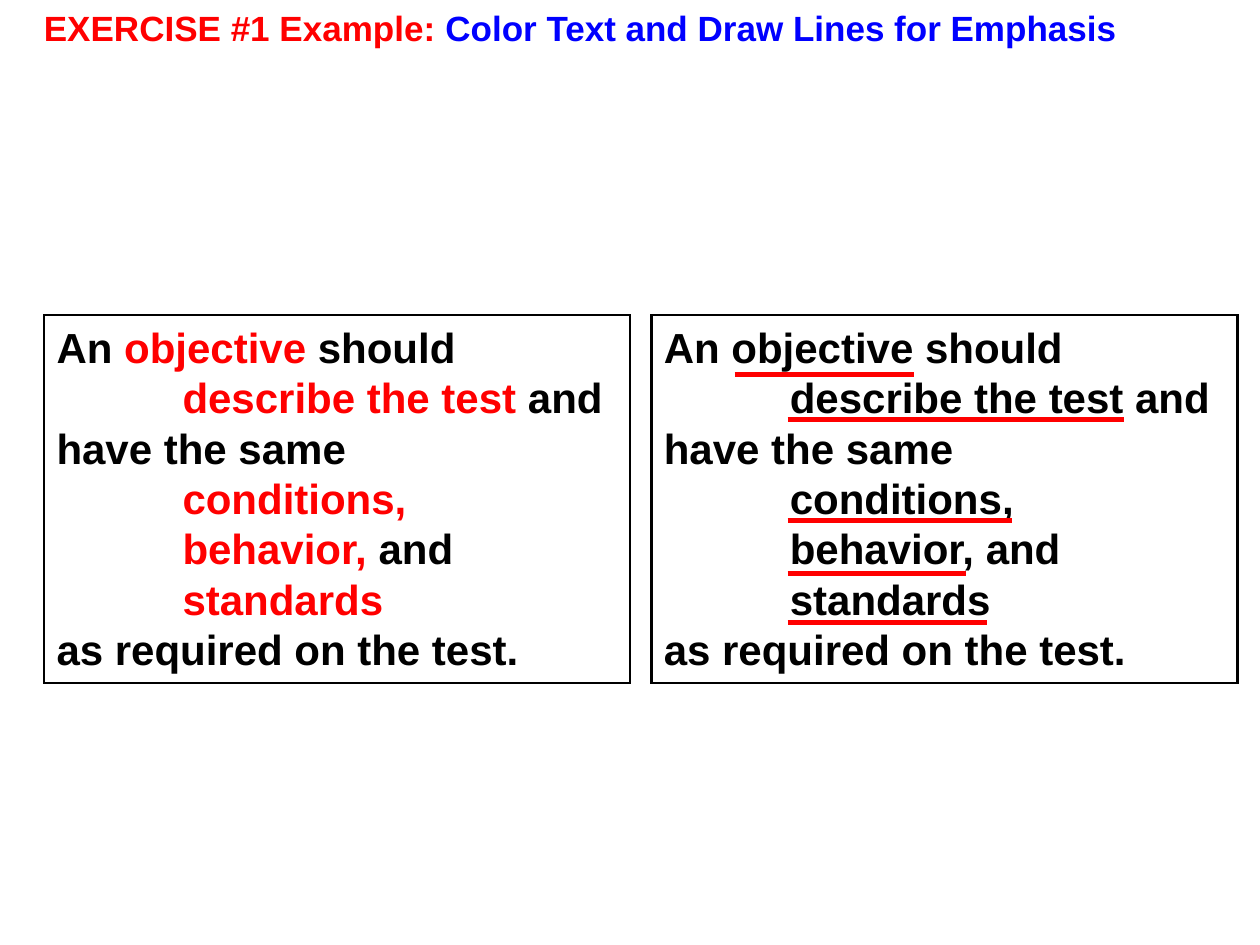
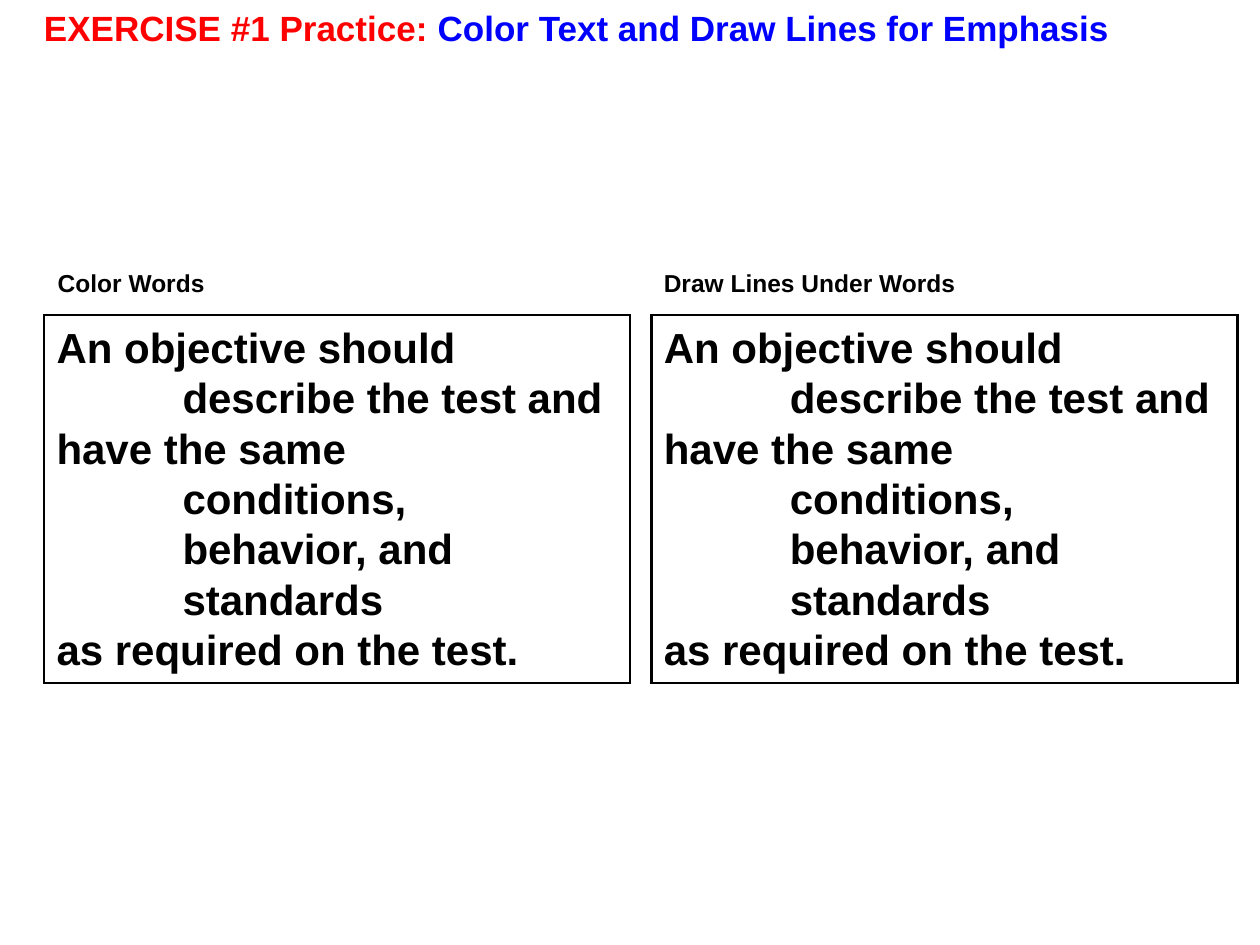
from lxml.etree import SubElement
from pptx import Presentation
from pptx.dml.color import RGBColor
from pptx.enum.shapes import MSO_CONNECTOR, MSO_SHAPE
from pptx.enum.text import MSO_ANCHOR, MSO_AUTO_SIZE, PP_ALIGN
from pptx.oxml.ns import qn
from pptx.util import Inches, Pt

FONT = "Arial"
BLACK, RED, BLUE = "000000", "FF0000", "0000FF"
TOPIC = "Color Text and Draw Lines for Emphasis"
PANEL_W, PANEL_H, PANEL_TOP = 4.65, 2.92, 2.5
PANEL_LEFTS = (0.35, 5.17)
CAPTION_H, CAPTION_RISE = 0.34, 0.42
TAB = 1

OBJECTIVE = [
    ("An ", "objective ", "should"),
    ("", "\tdescribe the test ", "and"),
    ("have the same", "", ""),
    ("", "\tconditions,", ""),
    ("", "\tbehavior, ", "and"),
    ("", "\tstandards", ""),
    ("as required on the test.", "", ""),
]
UNDERLINES = [
    (0.66, 0.47, 1.42),
    (1.08, 0.83, 2.67),
    (1.08, 1.63, 1.78),
    (1.08, 2.05, 1.42),
    (1.08, 2.44, 1.58),
]


def color(value):
    """Turn a hex string into a colour."""
    return RGBColor.from_string(value)


def set_tab(p):
    """Give a paragraph one left tab stop."""
    tabs = SubElement(p._p.get_or_add_pPr(), qn("a:tabLst"))
    SubElement(tabs, qn("a:tab"), pos=str(Inches(TAB)), algn="l")


def write(sp, lines, size):
    """Fill a shape with lines of (text, colour) runs."""
    tf = sp.text_frame
    tf.word_wrap = False
    tf.auto_size = MSO_AUTO_SIZE.SHAPE_TO_FIT_TEXT
    tf.vertical_anchor = MSO_ANCHOR.TOP
    for i, line in enumerate(lines):
        p = tf.add_paragraph() if i else tf.paragraphs[0]
        p.alignment = PP_ALIGN.LEFT
        if line[0][0].startswith("\t"):
            set_tab(p)
        for text, hue in line:
            r = p.add_run()
            r.text = text
            r.font.name, r.font.size, r.font.bold = FONT, Pt(size), True
            r.font.color.rgb = color(hue)


def add_label(s, x, y, w, h, runs, size):
    """Place one line of text."""
    sp = s.shapes.add_textbox(Inches(x), Inches(y), Inches(w), Inches(h))
    write(sp, [runs], size)


def add_title(s, stage, w):
    """Place the two-colour slide title."""
    runs = [(f"EXERCISE #1 {stage}: ", RED), (TOPIC, BLUE)]
    add_label(s, 0.25, 0, w, 0.44, runs, 20)


def add_panel(s, x, y, key_color=BLACK):
    """Place the framed objective with its key words in one colour."""
    sp = s.shapes.add_shape(MSO_SHAPE.RECTANGLE, Inches(x), Inches(y),
                            Inches(PANEL_W), Inches(PANEL_H))
    sp.shadow.inherit = False
    sp.fill.background()
    sp.line.color.rgb = color(BLACK)
    sp.line.width = Pt(1.5)
    SubElement(sp.line._get_or_add_ln(), qn("a:miter"), lim="800000")
    hues = (BLACK, key_color, BLACK)
    lines = [[(text, hue) for text, hue in zip(line, hues) if text]
             for line in OBJECTIVE]
    write(sp, lines, 24)


def add_underlines(s, x, y):
    """Draw the lines under the key words of a panel."""
    for dx, dy, length in UNDERLINES:
        line = s.shapes.add_connector(
            MSO_CONNECTOR.STRAIGHT, Inches(x + dx), Inches(y + dy),
            Inches(x + dx + length), Inches(y + dy))
        line.line.color.rgb = color(RED)
        line.line.width = Pt(3)
        SubElement(line._element.spPr, qn("a:effectLst"))


def build_example(s):
    """Show both kinds of emphasis."""
    left, right = PANEL_LEFTS
    add_title(s, "Example", 8.97)
    add_panel(s, left, PANEL_TOP, RED)
    add_panel(s, right, PANEL_TOP)
    add_underlines(s, right, PANEL_TOP)


def build_practice(s):
    """Show two plain panels with captions."""
    add_title(s, "Practice", 8.72)
    captions = (("Color Words", 0.36, 1.37),
                ("Draw Lines Under Words", 5.17, 2.53))
    for x, (text, caption_x, w) in zip(PANEL_LEFTS, captions):
        add_panel(s, x, PANEL_TOP)
        add_label(s, caption_x, PANEL_TOP - CAPTION_RISE, w, CAPTION_H,
                  [(text, BLACK)], 14)


def main():
    """Build and save the two slides."""
    prs = Presentation()
    prs.slide_width, prs.slide_height = Inches(10), Inches(7.5)
    for build in (build_example, build_practice):
        build(prs.slides.add_slide(prs.slide_layouts[6]))
    prs.save("out.pptx")


if __name__ == "__main__":
    main()
